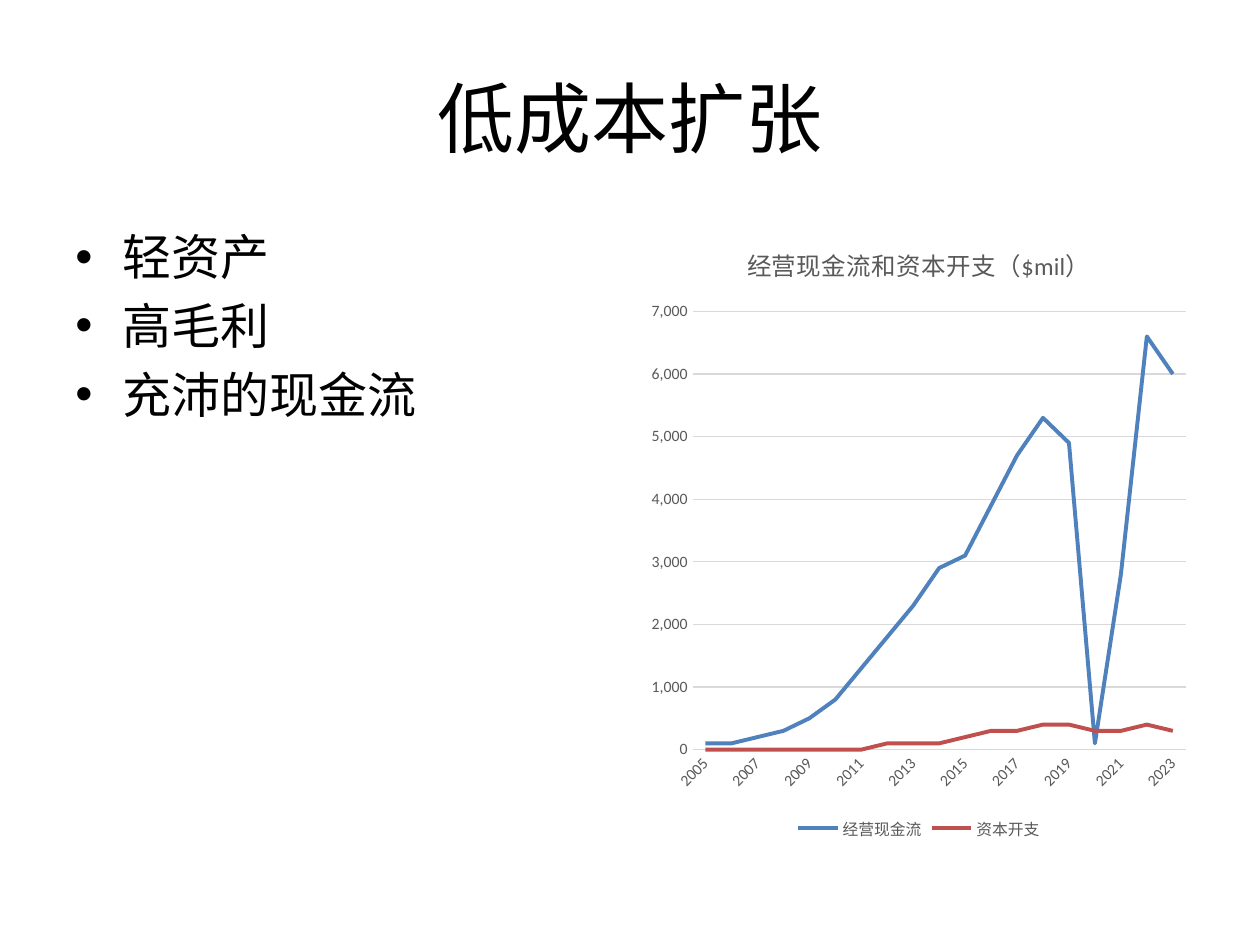
from lxml import etree
from pptx import Presentation
from pptx.chart.data import CategoryChartData
from pptx.dml.color import RGBColor
from pptx.enum.chart import XL_CHART_TYPE, XL_LEGEND_POSITION, XL_MARKER_STYLE, XL_TICK_MARK
from pptx.enum.text import MSO_ANCHOR, PP_ALIGN
from pptx.oxml.ns import qn
from pptx.util import Pt

LINE = XL_CHART_TYPE.LINE
BOTTOM = XL_LEGEND_POSITION.BOTTOM
NO_MARKER = XL_MARKER_STYLE.NONE
NO_TICK = XL_TICK_MARK.NONE
MIDDLE = MSO_ANCHOR.MIDDLE
CENTER = PP_ALIGN.CENTER

FONT = "Calibri"
BLACK, GREY, PALE = "000000", "595959", "D9D9D9"
TOP, COL_W, COL_H = 126, 318, 356.4

BULLETS = ["轻资产", "高毛利", "充沛的现金流"]
YEARS = [str(year) for year in range(2005, 2024)]
SERIES = [
    ("经营现金流", "4F81BD",
     [100, 100, 200, 300, 500, 800, 1300, 1800, 2300, 2900,
      3100, 3900, 4700, 5300, 4900, 100, 2800, 6600, 6000]),
    ("资本开支", "C0504D",
     [0, 0, 0, 0, 0, 0, 0, 100, 100, 100,
      200, 300, 300, 400, 400, 300, 300, 400, 300]),
]


def rgb(color):
    return RGBColor.from_string(color)


def style_font(font, size, color):
    font.name = FONT
    font.size = Pt(size)
    font.bold = False
    font.color.rgb = rgb(color)


def style_line(line, color, width):
    line.color.rgb = rgb(color)
    line.width = Pt(width)


def add_title(s, text):
    sp = s.shapes.title
    sp.left, sp.top, sp.width, sp.height = Pt(36), Pt(21.6), Pt(648), Pt(90)
    tf = sp.text_frame
    tf.vertical_anchor = MIDDLE
    p = tf.paragraphs[0]
    p.alignment = CENTER
    r = p.add_run()
    r.text = text
    style_font(r.font, 44, BLACK)


def add_bullets(s, items):
    tf = s.shapes.add_textbox(Pt(36), Pt(TOP), Pt(COL_W), Pt(COL_H)).text_frame
    tf.word_wrap = True
    for i, item in enumerate(items):
        p = tf.add_paragraph() if i else tf.paragraphs[0]
        pPr = p._p.get_or_add_pPr()
        pPr.set("marL", str(Pt(27)))
        pPr.set("indent", str(-Pt(27)))
        etree.SubElement(pPr, qn("a:buFont"), typeface="Arial")
        etree.SubElement(pPr, qn("a:buChar"), char="•")
        if i:
            p.space_before = Pt(5.6)
        r = p.add_run()
        r.text = item
        style_font(r.font, 28, BLACK)


def style_axis(axis):
    axis.major_tick_mark = axis.minor_tick_mark = NO_TICK
    style_font(axis.tick_labels.font, 9, GREY)


def add_line_chart(s, title):
    data = CategoryChartData(number_format="#,##0")
    data.categories = YEARS
    for name, _, values in SERIES:
        data.add_series(name, values)
    chart = s.shapes.add_chart(LINE, Pt(366), Pt(TOP), Pt(COL_W), Pt(COL_H), data).chart
    style_font(chart.font, 10, BLACK)

    # Title and legend
    chart.has_title = True
    r = chart.chart_title.text_frame.paragraphs[0].add_run()
    r.text = title
    style_font(r.font, 14, GREY)
    chart.chart_title.include_in_layout = False
    chart.has_legend = True
    chart.legend.position = BOTTOM
    chart.legend.include_in_layout = False
    style_font(chart.legend.font, 9, GREY)

    # Axes; the category labels turn automatically
    cat, val = chart.category_axis, chart.value_axis
    style_axis(cat)
    style_line(cat.format.line, PALE, 0.75)
    cat._element.find(qn("c:txPr")).find(qn("a:bodyPr")).set("rot", "-60000000")
    style_axis(val)
    val.format.line.fill.background()
    val.has_major_gridlines = True
    style_line(val.major_gridlines.format.line, PALE, 0.75)
    val.minimum_scale, val.maximum_scale, val.major_unit = 0, 7000, 1000
    val.tick_labels.number_format = "#,##0"
    val.tick_labels.number_format_is_linked = False

    # Series
    plot = chart.plots[0]
    plot.vary_by_categories = False
    for series, (_, color, _) in zip(plot.series, SERIES):
        series.smooth = False
        series.marker.style = NO_MARKER
        style_line(series.format.line, color, 2.25)


def main():
    prs = Presentation()
    prs.slide_width, prs.slide_height = Pt(720), Pt(540)
    s = prs.slides.add_slide(prs.slide_layouts[5])
    add_title(s, "低成本扩张")
    add_bullets(s, BULLETS)
    add_line_chart(s, "经营现金流和资本开支（$mil）")
    prs.save("out.pptx")


if __name__ == "__main__":
    main()
